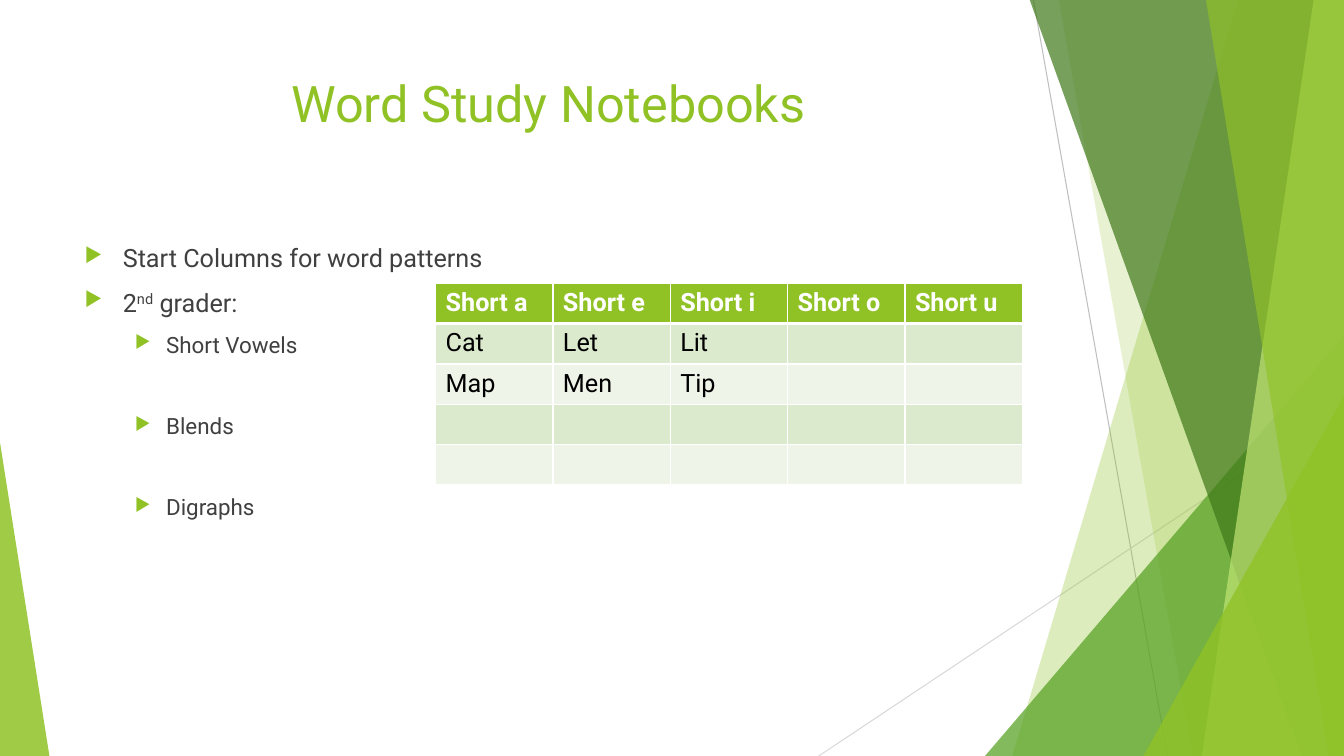
"""Build the Word Study Notebooks slide with its vowel table and faceted border."""
from dataclasses import dataclass

from pptx import Presentation
from pptx.dml.color import RGBColor
from pptx.enum.shapes import MSO_CONNECTOR, MSO_SHAPE
from pptx.enum.text import MSO_ANCHOR, PP_ALIGN
from pptx.oxml.ns import qn
from pptx.oxml.xmlchemy import OxmlElement
from pptx.util import Inches, Pt

STRAIGHT = MSO_CONNECTOR.STRAIGHT
TRIANGLE = MSO_SHAPE.ISOSCELES_TRIANGLE
TOP = MSO_ANCHOR.TOP
LEFT, CENTER = PP_ALIGN.LEFT, PP_ALIGN.CENTER


@dataclass(frozen=True)
class Theme:
    font: str = "Roboto"
    green: str = "90C226"
    leaf: str = "54A021"
    forest: str = "3F7819"
    lime: str = "C0E474"
    body: str = "404040"
    black: str = "000000"
    white: str = "FFFFFF"
    band_dark: str = "DBE9CD"
    band_light: str = "EEF4E8"
    ray_dark: str = "BFBFBF"
    ray_light: str = "D9D9D9"
    title_size: int = 36
    text_size: int = 18
    sub_size: int = 16


THEME = Theme()
WIDTH, HEIGHT = 13.33, 7.5

TITLE = "Word Study Notebooks"
OUTLINE = [
    (0, 10, [("Start Columns for word patterns", 0)]),
    (0, 10, [("2", 0), ("nd", 30), (" grader:", 0)]),
    (1, 10, [("Short Vowels", 0)]),
    (1, 38.75, [("Blends", 0)]),
    (1, 38.75, [("Digraphs", 0)]),
]
LEVELS = [(0.38, -0.38, THEME.text_size), (0.81, -0.31, THEME.sub_size)]
WORD_ROWS = [
    ["Short a", "Short e", "Short i", "Short o", "Short u"],
    ["Cat", "Let", "Lit", "", ""],
    ["Map", "Men", "Tip", "", ""],
    [""] * 5,
    [""] * 5,
]

RAYS = [
    ((10.25, 0), (11.58, HEIGHT), THEME.ray_dark),
    ((WIDTH, 4.03), (8.12, HEIGHT), THEME.ray_light),
]
FACETS = [
    ("band", (12.28, 10.04), THEME.green, 30),
    ("band", (10.5, 11.83), THEME.green, 20),
    ("corner", (9.77, 3.33, 3.56, 4.17, 1), THEME.leaf, 72),
    ("band", (10.21, 12.91), THEME.forest, 70),
    ("band", (13.03, 11.92), THEME.lime, 70),
    ("band", (11.96, 13.18), THEME.green, 65),
    ("corner", (11.34, 3.93, 1.99, 3.57, 1), THEME.green, 80),
    ("corner", (0, 4.39, 0.49, 3.11, 0), THEME.green, 85),
]


def add_child(parent, tag, **attributes):
    child = OxmlElement(tag)
    for key, value in attributes.items():
        child.set(key, str(value))
    parent.append(child)
    return child


def write(paragraph, text, *, size, color, bold=False, align=LEFT, raised=0):
    paragraph.alignment = align
    run = paragraph.add_run()
    run.text = text
    run.font.name = THEME.font
    run.font.size = Pt(size)
    run.font.bold = bold
    run.font.color.rgb = RGBColor.from_string(color)
    if raised:
        run.font._element.set("baseline", str(raised * 1000))


def add_ray(slide, start, end, color):
    ray = slide.shapes.add_connector(STRAIGHT, *map(Inches, start + end))
    ray.line.color.rgb = RGBColor.from_string(color)
    ray.line.width = Pt(0.75)
    add_child(ray._element.spPr, "a:effectLst")


def add_facet(slide, kind, geometry, color, opacity):
    if kind == "band":
        top_x, bottom_x = geometry
        corners = [(top_x, -0.01), (WIDTH, -0.01), (WIDTH, HEIGHT), (bottom_x, HEIGHT)]
        points = [(Inches(x), Inches(y)) for x, y in corners]
        builder = slide.shapes.build_freeform(*points[0])
        builder.add_line_segments(points[1:], close=True)
        facet = builder.convert_to_shape()
    else:
        *box, apex = geometry
        facet = slide.shapes.add_shape(TRIANGLE, *map(Inches, box))
        facet.adjustments[0] = apex
    facet.shadow.inherit = False
    facet.line.fill.background()
    facet.fill.solid()
    facet.fill.fore_color.rgb = RGBColor.from_string(color)
    tint = facet._element.spPr.find(qn("a:solidFill")).find(qn("a:srgbClr"))
    add_child(tint, "a:alpha", val=opacity * 1000)


def add_title(slide):
    title = slide.shapes.title
    title.left, title.top, title.width, title.height = map(Inches, (0.74, 0.67, 9.4, 1.44))
    title.text_frame.vertical_anchor = TOP
    write(title.text_frame.paragraphs[0], TITLE, size=THEME.title_size,
          color=THEME.green, align=CENTER)


def add_outline(slide):
    frame = slide.shapes.add_textbox(*map(Inches, (0.74, 2.36, 9.4, 4.24))).text_frame
    frame.word_wrap = True
    for index, (level, gap, pieces) in enumerate(OUTLINE):
        paragraph = frame.add_paragraph() if index else frame.paragraphs[0]
        margin, indent, size = LEVELS[level]
        paragraph.level = level
        paragraph.space_before = Pt(gap)
        for text, raised in pieces:
            write(paragraph, text, size=size, color=THEME.body, raised=raised)
        properties = paragraph._p.get_or_add_pPr()
        properties.set("marL", str(Inches(margin)))
        properties.set("indent", str(Inches(indent)))
        add_child(add_child(properties, "a:buClr"), "a:srgbClr", val=THEME.green)
        add_child(properties, "a:buSzPct", val=80000)
        add_child(properties, "a:buChar", char="▶")


def add_borders(cell, widths):
    properties = cell._tc.get_or_add_tcPr()
    for index, (side, width) in enumerate(widths.items()):
        border = add_child(properties, f"a:ln{side}", w=Pt(width))
        add_child(add_child(border, "a:solidFill"), "a:srgbClr", val=THEME.white)
        properties.insert(index, border)


def add_word_table(slide):
    rows, columns = len(WORD_ROWS), len(WORD_ROWS[0])
    box = map(Inches, (4.32, 2.81, 5.82, 0.4 * rows))
    table = slide.shapes.add_table(rows, columns, *box).table
    table.horz_banding = False
    for r, words in enumerate(WORD_ROWS):
        header = r == 0
        band = THEME.band_dark if r % 2 else THEME.band_light
        for c, word in enumerate(words):
            cell = table.cell(r, c)
            cell.fill.solid()
            cell.fill.fore_color.rgb = RGBColor.from_string(THEME.green if header else band)
            add_borders(cell, {"L": 1, "R": 1, "T": 3 if r == 1 else 1, "B": 3 if header else 1})
            if word:
                write(cell.text_frame.paragraphs[0], word, size=THEME.text_size,
                      color=THEME.white if header else THEME.black, bold=header)


def main():
    deck = Presentation()
    deck.slide_width, deck.slide_height = Inches(WIDTH), Inches(HEIGHT)
    slide = deck.slides.add_slide(deck.slide_layouts[5])
    for ray in RAYS:
        add_ray(slide, *ray)
    for facet in FACETS:
        add_facet(slide, *facet)
    add_title(slide)
    add_outline(slide)
    add_word_table(slide)
    deck.save("out.pptx")


if __name__ == "__main__":
    main()
